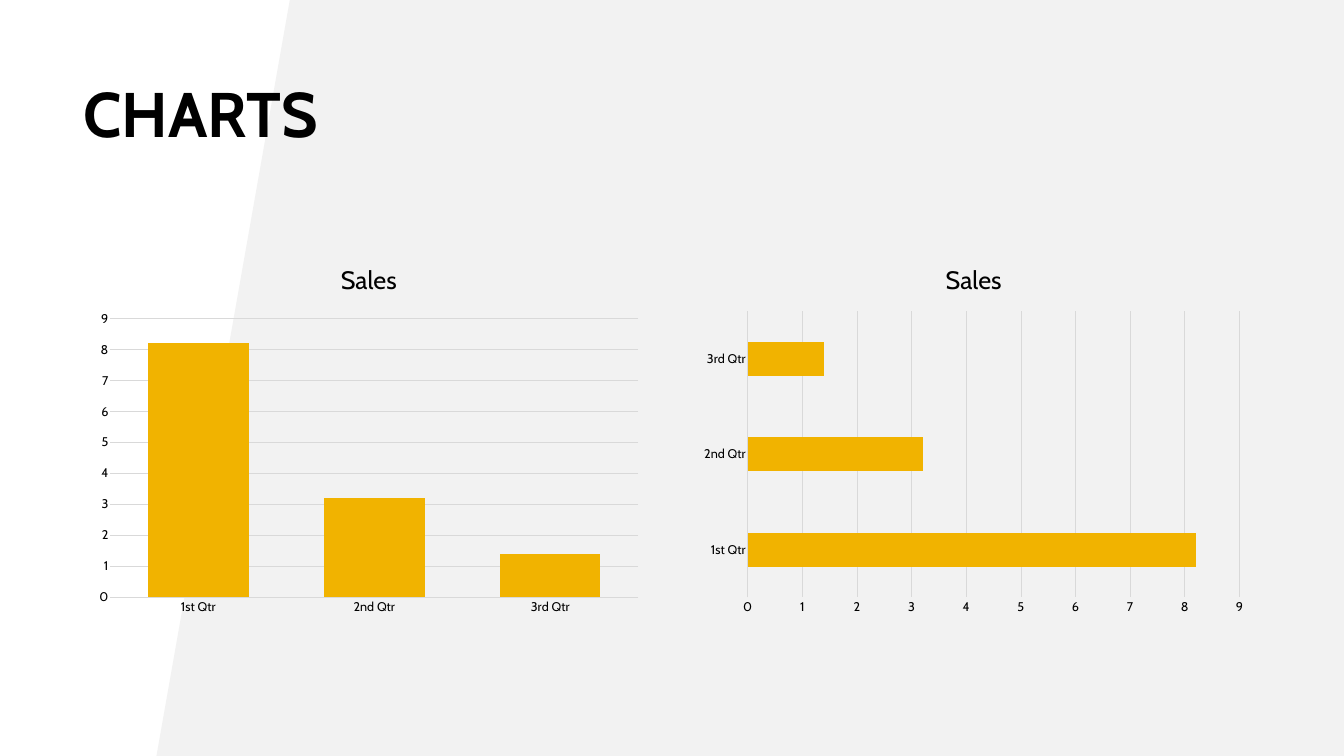
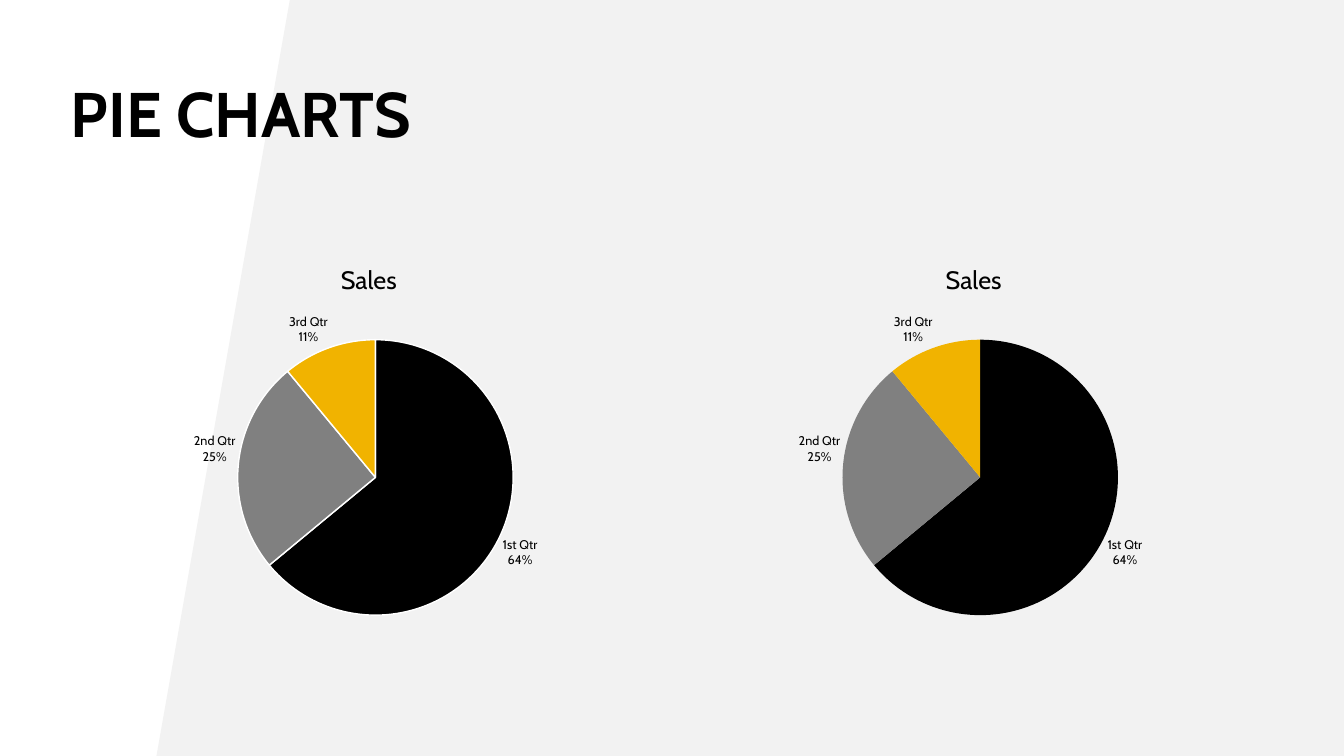
import dataclasses

import lxml.etree
import pptx
import pptx.chart.data
import pptx.dml.color
import pptx.enum.chart
import pptx.enum.text
import pptx.oxml.ns
import pptx.util

EMU_PER_PX = 9525
WIDTH, HEIGHT = 2560, 1440
PANEL = [(552, 0), (WIDTH, 0), (WIDTH, HEIGHT), (298, HEIGHT)]
TITLE_BOX = (135, 160, 2208, 128)
LEFT_CHART = (168, 472, 1069, 713)
RIGHT_CHART = (1320, 472, 1069, 713)
QUARTERS = ["1st Qtr", "2nd Qtr", "3rd Qtr"]
SALES = [8.2, 3.2, 1.4]
SHARES = [64, 25, 11]
CHART_TYPE = pptx.enum.chart.XL_CHART_TYPE


def rgb(value):
    return pptx.dml.color.RGBColor.from_string(value)


def px(*lengths):
    return [pptx.util.Emu(length * EMU_PER_PX) for length in lengths]


@dataclasses.dataclass(frozen=True)
class Theme:
    font: str = "Cabin"
    ink: str = "000000"
    paper: str = "FFFFFF"
    panel: str = "F2F2F2"
    grid: str = "D9D9D9"
    accent: str = "F1B300"
    slices: tuple = ("000000", "808080", "F1B300")
    title_size: int = 90
    title_leading: int = 95
    heading_size: int = 36
    label_size: int = 18
    grid_width: float = 0.75
    slice_gap: float = 2


class Deck:
    """Builds slides in one theme, adding each element to the current slide."""

    def __init__(self, theme):
        self.theme = theme
        self.presentation = pptx.Presentation()
        self.presentation.slide_width, self.presentation.slide_height = px(WIDTH, HEIGHT)
        self.slide = None

    def style(self, font, size, bold=False):
        font.name = self.theme.font
        font.size = pptx.util.Pt(size)
        font.bold = bold
        font.color.rgb = rgb(self.theme.ink)

    def rule(self, line):
        line.color.rgb = rgb(self.theme.grid)
        line.width = pptx.util.Pt(self.theme.grid_width)

    def add_slide(self, title, inset=0):
        self.slide = self.presentation.slides.add_slide(self.presentation.slide_layouts[5])
        self.add_panel()
        self.add_title(title, inset)

    def add_panel(self):
        start, *corners = PANEL
        outline = self.slide.shapes.build_freeform(*start, scale=EMU_PER_PX)
        outline.add_line_segments(corners, close=True)
        panel = outline.convert_to_shape()
        panel.shadow.inherit = False
        panel.fill.solid()
        panel.fill.fore_color.rgb = rgb(self.theme.panel)
        panel.line.fill.background()
        self.slide.shapes.element.insert(2, panel.element)

    def add_title(self, text, inset):
        title = self.slide.shapes.title
        title.left, title.top, title.width, title.height = px(*TITLE_BOX)
        frame = title.text_frame
        frame.text = text
        frame.margin_left, frame.margin_top, frame.margin_right, frame.margin_bottom = px(inset, 0, 0, 0)
        frame.vertical_anchor = pptx.enum.text.MSO_ANCHOR.TOP
        frame.auto_size = pptx.enum.text.MSO_AUTO_SIZE.SHAPE_TO_FIT_TEXT
        frame.word_wrap = True
        heading = frame.paragraphs[0]
        heading.alignment = pptx.enum.text.PP_ALIGN.LEFT
        heading.line_spacing = pptx.util.Pt(self.theme.title_leading)
        self.style(heading.runs[0].font, self.theme.title_size, bold=True)

    def add_chart(self, kind, box, values):
        data = pptx.chart.data.CategoryChartData()
        data.categories = QUARTERS
        data.add_series("Sales", values)
        chart = self.slide.shapes.add_chart(kind, *px(*box), data).chart
        self.style(chart.font, self.theme.label_size)
        chart.has_legend = False
        chart.has_title = True
        chart.chart_title.include_in_layout = False
        heading = chart.chart_title.text_frame
        heading.text = "Sales"
        self.style(heading.paragraphs[0].runs[0].font, self.theme.heading_size)
        return chart

    def add_bars(self, kind, box, values, gap, overlap=0):
        chart = self.add_chart(kind, box, values)
        bars = chart.plots[0]
        bars.vary_by_categories = False
        bars.gap_width = gap
        bars.overlap = overlap
        sales = bars.series[0]
        sales.invert_if_negative = False
        sales.format.fill.solid()
        sales.format.fill.fore_color.rgb = rgb(self.theme.accent)
        quarters, amounts = chart.category_axis, chart.value_axis
        for axis in (quarters, amounts):
            axis.major_tick_mark = pptx.enum.chart.XL_TICK_MARK.NONE
            axis.minor_tick_mark = pptx.enum.chart.XL_TICK_MARK.NONE
            self.style(axis.tick_labels.font, self.theme.label_size)
        quarters.has_major_gridlines = False
        self.rule(quarters.format.line)
        amounts.minimum_scale, amounts.maximum_scale, amounts.major_unit = 0, 9, 1
        amounts.has_major_gridlines = True
        self.rule(amounts.major_gridlines.format.line)
        amounts.format.line.fill.background()

    def add_pie(self, box, values, outlined):
        pie = self.add_chart(CHART_TYPE.PIE, box, values).plots[0]
        pie.vary_by_categories = True
        sales = pie.series[0]
        for index, color in enumerate(self.theme.slices):
            quarter = sales.points[index].format
            quarter.fill.solid()
            quarter.fill.fore_color.rgb = rgb(color)
            if outlined:
                quarter.line.color.rgb = rgb(self.theme.paper)
                quarter.line.width = pptx.util.Pt(self.theme.slice_gap)
            else:
                quarter.line.fill.background()
        labels = sales.data_labels
        labels.show_value = False
        labels.show_category_name = True
        labels.show_percentage = True
        labels.number_format = "0%"
        labels.number_format_is_linked = False
        labels.position = pptx.enum.chart.XL_LABEL_POSITION.OUTSIDE_END
        self.style(labels.font, self.theme.label_size)
        separator = lxml.etree.Element(pptx.oxml.ns.qn("c:separator"))
        separator.text = "\n"
        labels._element.find(pptx.oxml.ns.qn("c:showBubbleSize")).addnext(separator)


def main():
    deck = Deck(Theme())
    deck.add_slide("CHARTS", inset=24)
    deck.add_bars(CHART_TYPE.COLUMN_CLUSTERED, LEFT_CHART, SALES, gap=75, overlap=-25)
    deck.add_bars(CHART_TYPE.BAR_CLUSTERED, RIGHT_CHART, SALES, gap=182)
    deck.add_slide("PIE CHARTS")
    deck.add_pie(LEFT_CHART, SHARES, outlined=True)
    deck.add_pie(RIGHT_CHART, SHARES, outlined=False)
    deck.presentation.save("out.pptx")


if __name__ == "__main__":
    main()
